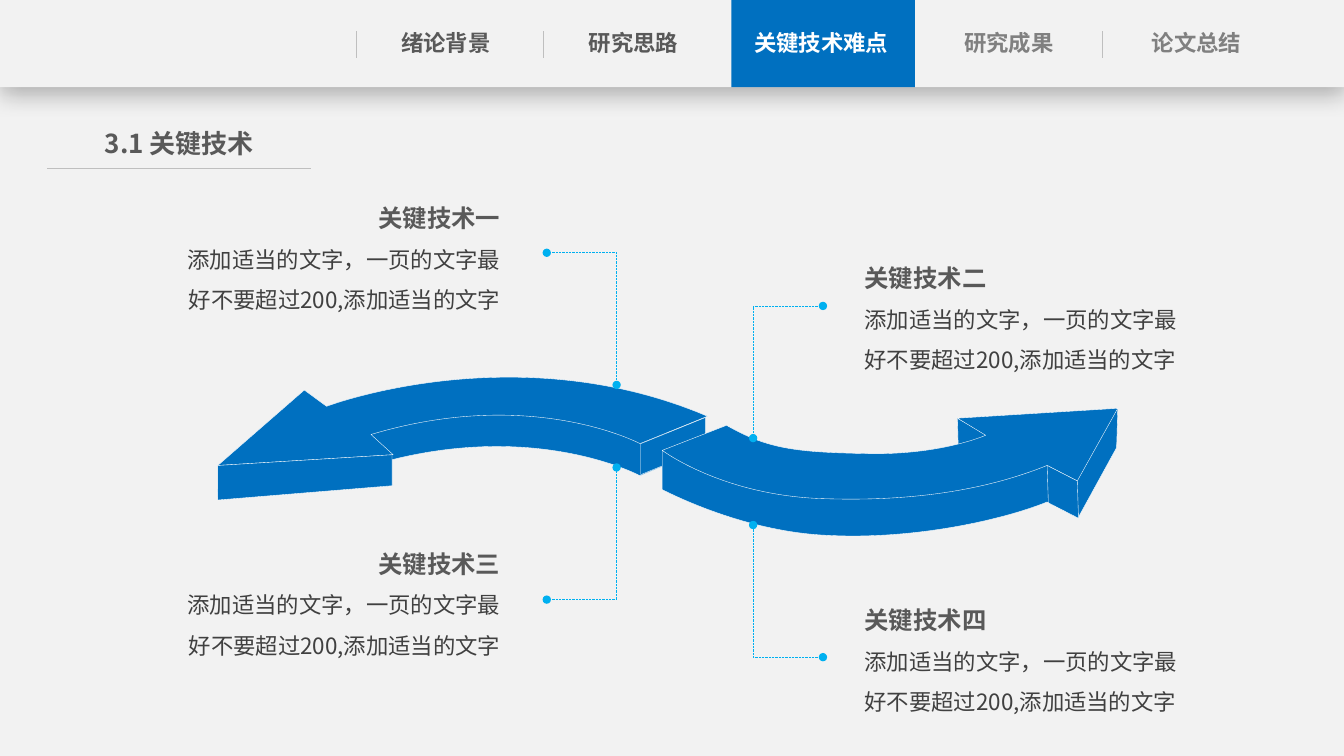
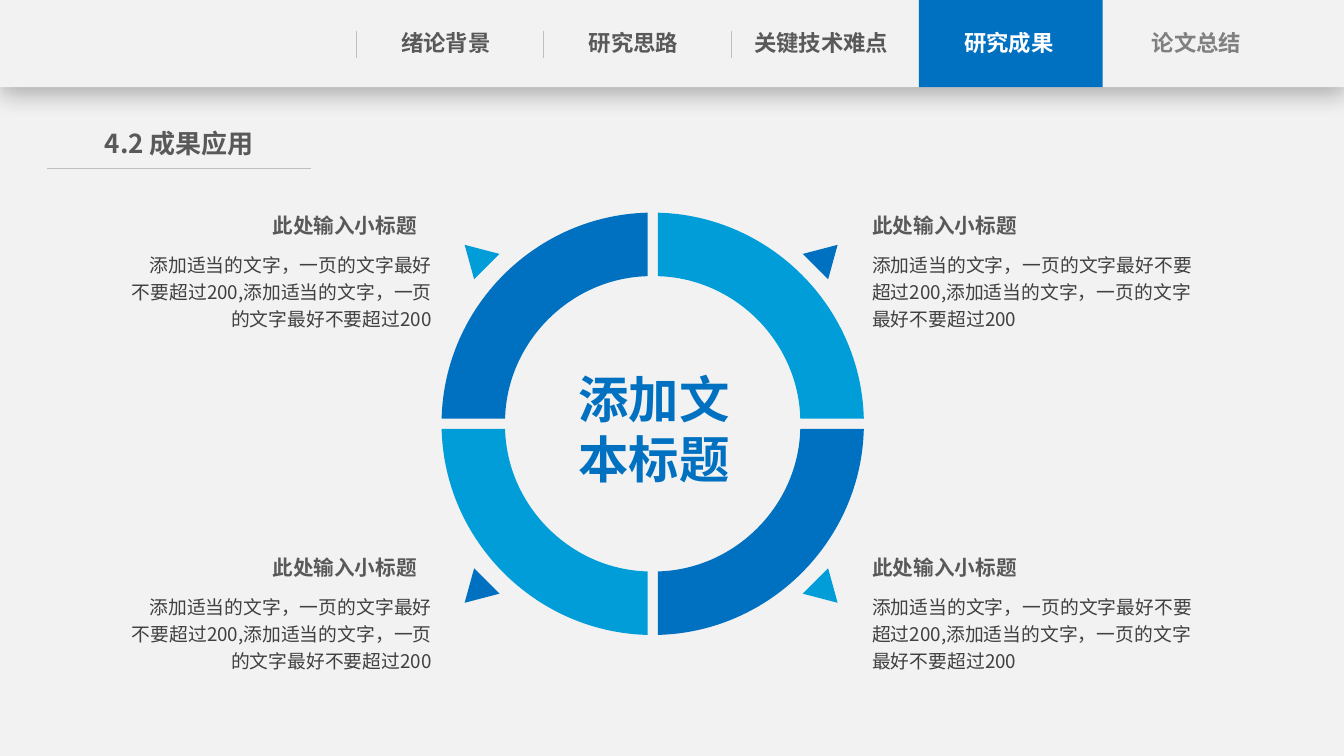
from lxml.etree import SubElement
from pptx import Presentation
from pptx.dml.color import RGBColor
from pptx.enum.dml import MSO_LINE
from pptx.enum.shapes import MSO_CONNECTOR, MSO_SHAPE
from pptx.enum.text import MSO_ANCHOR, MSO_AUTO_SIZE, PP_ALIGN
from pptx.oxml.ns import qn
from pptx.util import Cm, Pt

FONT = "Noto Sans CJK SC"
BACKGROUND = "F2F2F2"
BLUE = "0070C0"
LIGHT_BLUE = "009DD9"
LEADER_BLUE = "00B0F0"
HEADING_GRAY = "595959"
BODY_GRAY = "404040"
PENDING_GRAY = "808080"
RULE_GRAY = "BFBFBF"
WHITE = "FFFFFF"

color = RGBColor.from_string


def write_text(shape, lines, alignment, margins, spacing=1.0):
    frame = shape.text_frame
    frame.word_wrap = True
    frame.auto_size = MSO_AUTO_SIZE.NONE
    frame.vertical_anchor = MSO_ANCHOR.TOP
    frame.margin_left = frame.margin_right = Cm(margins[0])
    frame.margin_top = frame.margin_bottom = Cm(margins[1])
    frame.text = "\n".join(line[0] for line in lines)
    for paragraph, (text, size, text_color, bold) in zip(frame.paragraphs, lines):
        paragraph.alignment = alignment
        paragraph.line_spacing = spacing
        for run in paragraph.runs:
            run.font.size = Pt(size)
            run.font.bold = bold
            run.font.color.rgb = color(text_color)
            run.font.name = FONT
            SubElement(run.font._element, qn("a:ea"), typeface=FONT)


def add_outline(slide, segments, fill_color=None):
    extent = []
    for segment in segments:
        if len(segment) == 6:
            x0, y0 = extent[-1]
            x1, y1, x2, y2, x3, y3 = segment
            for step in range(1, 20):
                t = step / 20
                a, b, c, d = (1 - t)**3, 3 * (1 - t)**2 * t, 3 * (1 - t) * t * t, t**3
                extent.append((a * x0 + b * x1 + c * x2 + d * x3,
                               a * y0 + b * y1 + c * y2 + d * y3))
        extent.append(segment[-2:])
    corners = [(Cm(x), Cm(y)) for x, y in extent]
    builder = slide.shapes.build_freeform(*corners[0])
    builder.add_line_segments(corners[1:], close=fill_color is not None)
    shape = builder.convert_to_shape()

    outline = next(shape._element.iter(qn("a:path")))
    for command in list(outline):
        outline.remove(command)
    for index, segment in enumerate(segments):
        name = "a:cubicBezTo" if len(segment) == 6 else "a:lnTo"
        command = SubElement(outline, qn(name if index else "a:moveTo"))
        for x, y in zip(segment[::2], segment[1::2]):
            SubElement(command, qn("a:pt"), x=str(Cm(x) - shape.left),
                       y=str(Cm(y) - shape.top))

    shape.shadow.inherit = False
    shape.line.fill.background()
    if fill_color:
        SubElement(outline, qn("a:close"))
        shape.fill.solid()
        shape.fill.fore_color.rgb = color(fill_color)
    else:
        shape.fill.background()
    return shape


presentation = Presentation()
presentation.slide_width = Cm(33.87)
presentation.slide_height = Cm(19.05)

tabs = ["绪论背景", "研究思路", "关键技术难点", "研究成果", "论文总结"]
tab_edges = [8.97, 13.7, 18.43, 23.16, 27.79]
slides = []

for title, active in [("3.1 关键技术", 2), ("4.2 成果应用", 3)]:
    slide = presentation.slides.add_slide(presentation.slide_layouts[5])
    slides.append(slide)

    title_shape = slide.shapes.title
    title_shape.left, title_shape.top = Cm(1.89), Cm(3.07)
    title_shape.width, title_shape.height = Cm(5.26), Cm(1.07)
    write_text(title_shape, [(title, 18.6, HEADING_GRAY, True)],
               PP_ALIGN.CENTER, (0, 0.13))

    panels = []
    for left, width, height, fill_color in [(0, 33.87, 19.05, BACKGROUND),
                                            (0, 33.87, 2.2, BACKGROUND),
                                            (tab_edges[active], 4.63, 2.2, BLUE)]:
        panel = slide.shapes.add_shape(MSO_SHAPE.RECTANGLE, Cm(left), 0,
                                       Cm(width), Cm(height))
        panel.shadow.inherit = False
        panel.fill.solid()
        panel.fill.fore_color.rgb = color(fill_color)
        panel.line.fill.background()
        panels.append(panel)
    backdrop, header, highlight = [panel._element for panel in panels]
    if len(slides) == 1:
        presentation.slide_master.shapes._spTree.insert(2, backdrop)
    else:
        slide.shapes._spTree.remove(backdrop)
    shadow = SubElement(header.spPr.find(qn("a:effectLst")), qn("a:outerShdw"),
                        blurRad=str(Pt(18)), dist=str(Pt(4)), dir="5400000",
                        algn="t", rotWithShape="0")
    shadow_color = SubElement(shadow, qn("a:srgbClr"), val="000000")
    SubElement(shadow_color, qn("a:alpha"), val="29000")

    rules = [(1.19, 4.24, 7.85, 4.24)]
    for index, (tab, edge) in enumerate(zip(tabs, tab_edges)):
        if index not in (active, active + 1):
            rules.append((edge, 0.79, edge, 1.47))
        tab_color = HEADING_GRAY
        if index == active:
            tab_color = WHITE
        elif index > active:
            tab_color = PENDING_GRAY
        box = slide.shapes.add_textbox(Cm(9.37 + index * 4.73), Cm(0.61),
                                       Cm(3.73), Cm(0.97))
        write_text(box, [(tab, 16, tab_color, True)], PP_ALIGN.CENTER, (0, 0.13))

    for ends in rules:
        rule = slide.shapes.add_connector(MSO_CONNECTOR.STRAIGHT,
                                          *[Cm(value) for value in ends])
        rule.line.color.rgb = color(RULE_GRAY)
        rule.line.width = Pt(0.5)
        SubElement(rule._element.spPr, qn("a:effectLst"))

technique_slide, outcome_slide = slides

left_arrow = [
    [(17.83, 11.28), (16.13, 11.99), (16.13, 11.99, 13.41, 10.52, 9.35, 11.73),
     (9.91, 12.24), (5.49, 12.52), (5.51, 11.71),
     (6.48, 11.58, 6.17, 11.13, 8.23, 11.05),
     (10.26, 10.97, 13, 9.22, 17.83, 11.28)],
    [(17.83, 10.49), (16.13, 11.18), (16.13, 11.18, 13.41, 9.73, 9.35, 10.95),
     (9.91, 11.46), (5.49, 11.73), (7.67, 9.83), (8.23, 10.24),
     (8.23, 10.24, 13, 8.43, 17.83, 10.49)],
    [(9.88, 11.46), (9.88, 12.24), (5.49, 12.6), (5.49, 11.73)],
    [(16.15, 11.18), (16.15, 11.96), (17.78, 11.3), (17.78, 10.52)],
]
right_arrow = [
    [(24.13, 10.54), (24.16, 11.63), (24.92, 12.04), (24.89, 10.97)],
    [(16.69, 11.35), (16.69, 12.34), (16.71, 12.34, 18.64, 13.39, 20.83, 13.49),
     (23.01, 13.61, 25.25, 13.11, 26.39, 12.65), (27.18, 13.03),
     (28.14, 11.28), (28.17, 10.29),
     (26.82, 10.69, 24.66, 11.2, 24.1, 11.46),
     (23.55, 11.71, 24.59, 11.73, 24.84, 11.89),
     (24.84, 11.89, 23.14, 12.45, 21.79, 12.34),
     (20.42, 12.27, 17.68, 11.89, 16.69, 11.35)],
    [(18.31, 10.72), (16.69, 11.35), (16.69, 11.35, 18.24, 12.52, 20.85, 12.57),
     (23.5, 12.65, 25.25, 12.19, 26.39, 11.73), (27.15, 12.12),
     (28.17, 10.29), (24.13, 10.54), (24.84, 10.97),
     (24.84, 10.97, 23.7, 11.48, 21.82, 11.43),
     (19.94, 11.4, 19.3, 11.28, 18.31, 10.72)],
    [(26.39, 11.73), (26.42, 12.67), (27.18, 13.06), (27.15, 12.12)],
]
for face in left_arrow + right_arrow:
    shape = add_outline(technique_slide, face, BLUE)
    shape.line.color.rgb = color(WHITE)
    shape.line.width = Pt(0.25)

technique_text = "添加适当的文字，一页的文字最好不要超过200,添加适当的文字"
left_side = (4.27, PP_ALIGN.RIGHT, 15.54, -1.76)
right_side = (21.46, PP_ALIGN.LEFT, 18.98, 1.76)
callouts = [
    ("关键技术一", left_side, 4.6, 9.7, -3.33),
    ("关键技术二", right_side, 6.11, 11.04, -3.33),
    ("关键技术三", left_side, 13.31, 11.78, 3.33),
    ("关键技术四", right_side, 14.74, 13.23, 3.33),
]
for heading, side, top, joint, rise in callouts:
    left, alignment, corner, run_length = side
    box = technique_slide.shapes.add_textbox(Cm(left), Cm(top), Cm(8.67), Cm(3.48))
    write_text(box, [(heading, 17.4, HEADING_GRAY, True),
                     (technique_text, 16, BODY_GRAY, False)],
               alignment, (0.33, 0.15), 1.5)
    leader = add_outline(technique_slide, [(corner, joint), (corner, joint + rise),
                                           (corner + run_length, joint + rise)])
    leader.line.color.rgb = color(LEADER_BLUE)
    leader.line.width = Pt(0.5)
    leader.line.dash_style = MSO_LINE.ROUND_DOT
    stroke = leader._element.spPr.find(qn("a:ln"))
    for end in ("a:headEnd", "a:tailEnd"):
        SubElement(stroke, qn(end), type="oval")

ring_center, pointer_center = (16.45, 10.68), (16.41, 10.68)
ring_quarter = [(5.32, 0.13), (5.25, 2.95, 2.95, 5.25, 0.13, 5.32), (0.13, 3.72),
                (2.07, 3.67, 3.67, 2.07, 3.72, 0.13)]
pointer = [(4.7, 4.51), (4.46, 3.64), (3.82, 4.28)]
outcome_text = "添加适当的文字，一页的文字最好不要超过200,添加适当的文字，一页的文字最好不要超过200"
columns = [(-1, 5.32, 3.1, 7.98, PP_ALIGN.RIGHT), (1, 21.78, 21.78, 8.48, PP_ALIGN.LEFT)]
rows = [(-1, 5.27), (1, 13.88)]

for sign_x, heading_left, body_left, body_width, alignment in columns:
    for sign_y, top in rows:
        ring_color, pointer_color = BLUE, LIGHT_BLUE
        if sign_x != sign_y:
            ring_color, pointer_color = LIGHT_BLUE, BLUE
        signs = (sign_x, sign_y)
        for center, segments, fill_color in [(ring_center, ring_quarter, ring_color),
                                             (pointer_center, pointer, pointer_color)]:
            mirrored = [tuple(center[axis % 2] + signs[axis % 2] * value
                              for axis, value in enumerate(segment))
                        for segment in segments]
            add_outline(outcome_slide, mirrored, fill_color)

        heading_box = outcome_slide.shapes.add_textbox(
            Cm(heading_left), Cm(top), Cm(5.39), Cm(0.84))
        write_text(heading_box, [("此处输入小标题", 14.7, HEADING_GRAY, True)],
                   alignment, (0.2, 0.1))
        body_box = outcome_slide.shapes.add_textbox(
            Cm(body_left), Cm(top + 0.91), Cm(body_width), Cm(2.29))
        write_text(body_box, [(outcome_text, 13.4, BODY_GRAY, False)],
                   alignment, (0.2, 0.1), 1.2)

center_box = outcome_slide.shapes.add_textbox(Cm(13.79), Cm(9.17), Cm(5.38), Cm(3.28))
write_text(center_box, [(line, 36, BLUE, True) for line in ("添加文", "本标题")],
           PP_ALIGN.CENTER, (0.2, 0.1))

presentation.save("out.pptx")
